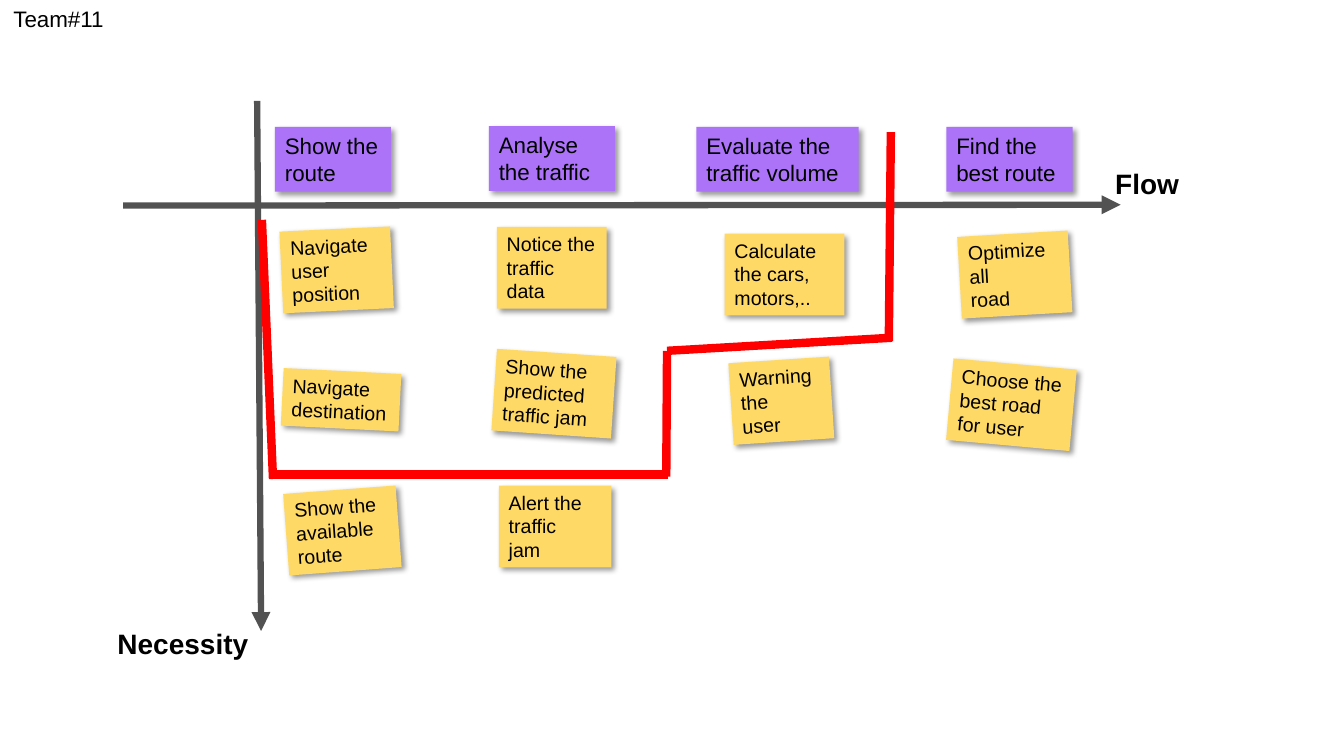
from dataclasses import dataclass

from lxml import etree
from pptx import Presentation
from pptx.dml.color import RGBColor
from pptx.enum.shapes import MSO_CONNECTOR, MSO_SHAPE
from pptx.enum.text import MSO_ANCHOR, MSO_AUTO_SIZE, PP_ALIGN
from pptx.oxml.ns import qn
from pptx.util import Cm, Pt

STRAIGHT = MSO_CONNECTOR.STRAIGHT
RECTANGLE = MSO_SHAPE.RECTANGLE
TOP = MSO_ANCHOR.TOP
FIT = MSO_AUTO_SIZE.SHAPE_TO_FIT_TEXT
LEFT, CENTER = PP_ALIGN.LEFT, PP_ALIGN.CENTER


@dataclass(frozen=True)
class Theme:
    font: str = "Arial"
    ink: str = "000000"
    axis: str = "525252"
    step: str = "AC73F9"
    story: str = "FFD966"
    release: str = "FF0000"
    step_size: int = 16
    story_size: int = 14
    axis_size: int = 20
    axis_width: float = 4.5
    release_width: float = 6


THEME = Theme()

LABELS = [
    ("Team#11", 0, 0, 2.95, 0.94, THEME.step_size, False),
    ("Flow", 27.79, 4.06, 2.24, 1.12, THEME.axis_size, True),
    ("Necessity", 2.64, 15.65, 3.94, 1.12, THEME.axis_size, True),
]
AXES = [
    (3.1, 5.18, 28.24, 5.16),
    (6.48, 2.54, 6.58, 15.9),
]
STEP_HEIGHT = 1.63
STEPS = [
    ("Show the route", 6.93, 3.2, 2.92),
    ("Analyse the traffic", 12.32, 3.18, 3.18),
    ("Evaluate the traffic volume", 17.55, 3.2, 4.09),
    ("Find the best route", 23.85, 3.2, 3.18),
]
TWO_LINES, THREE_LINES = 1.45, 2.06
STORIES = [
    ("Navigate user position", 7.09, 5.77, 2.79, THREE_LINES, -2.7),
    ("Navigate destination", 7.11, 9.35, 2.97, TWO_LINES, 2.9),
    ("Show the available route", 7.21, 12.34, 2.84, THREE_LINES, -4.3),
    ("Notice the traffic data", 12.52, 5.72, 2.77, THREE_LINES, 0),
    ("Show the predicted traffic jam", 12.45, 8.89, 3.02, THREE_LINES, 3.9),
    ("Alert the traffic\njam", 12.57, 12.24, 2.84, THREE_LINES, 0),
    ("Calculate the cars, motors,..", 18.26, 5.89, 3.02, THREE_LINES, 0),
    ("Warning the\nuser", 18.42, 9.07, 2.54, THREE_LINES, -3.8),
    ("Optimize all\nroad", 24.18, 5.89, 2.79, THREE_LINES, -3.3),
    ("Choose the best road for user", 23.93, 9.17, 3.12, THREE_LINES, 5.2),
]
RELEASE_BORDER = [
    (22.45, 3.33, 22.4, 8.59),
    (22.48, 8.51, 16.81, 8.84),
    (16.81, 8.84, 16.79, 12.01),
    (16.84, 11.96, 6.88, 11.96),
    (6.88, 12.07, 6.6, 5.54),
]


def write(frame, text, size, align, bold=False, wrap=True):
    frame.word_wrap = wrap
    frame.auto_size = FIT
    frame.vertical_anchor = TOP
    for index, line in enumerate(text.split("\n")):
        paragraph = frame.paragraphs[0] if index == 0 else frame.add_paragraph()
        paragraph.alignment = align
        run = paragraph.add_run()
        run.text = line
        run.font.name = THEME.font
        run.font.size = Pt(size)
        run.font.bold = bold
        run.font.color.rgb = RGBColor.from_string(THEME.ink)


def add_label(slide, text, left, top, width, height, size, bold):
    label = slide.shapes.add_textbox(Cm(left), Cm(top), Cm(width), Cm(height))
    write(label.text_frame, text, size, CENTER, bold, wrap=False)


def add_shadow(note):
    note.shadow.inherit = False
    effects = note.element.spPr.find(qn("a:effectLst"))
    shadow = etree.SubElement(
        effects, qn("a:outerShdw"), blurRad=str(Pt(4)), dist=str(Pt(3)),
        dir=str(45 * 60000), algn="tl", rotWithShape="0")
    color = etree.SubElement(shadow, qn("a:srgbClr"), val=THEME.ink)
    etree.SubElement(color, qn("a:alpha"), val="40000")


def add_note(slide, text, left, top, width, height, angle, color, size):
    note = slide.shapes.add_shape(RECTANGLE, Cm(left), Cm(top), Cm(width), Cm(height))
    note.rotation = angle
    note.fill.solid()
    note.fill.fore_color.rgb = RGBColor.from_string(color)
    note.line.fill.background()
    add_shadow(note)
    write(note.text_frame, text, size, LEFT)


def add_line(slide, ends, color, width, arrow=False):
    line = slide.shapes.add_connector(STRAIGHT, *map(Cm, ends))
    line.line.color.rgb = RGBColor.from_string(color)
    line.line.width = Pt(width)
    properties = line.element.spPr
    if arrow:
        etree.SubElement(properties.find(qn("a:ln")), qn("a:tailEnd"), type="triangle")
    etree.SubElement(properties, qn("a:effectLst"))


def main():
    deck = Presentation()
    deck.slide_width, deck.slide_height = Cm(33.87), Cm(19.05)
    slide = deck.slides.add_slide(deck.slide_layouts[6])
    for axis in AXES:
        add_line(slide, axis, THEME.axis, THEME.axis_width, arrow=True)
    for label in LABELS:
        add_label(slide, *label)
    for step in STEPS:
        add_note(slide, *step, STEP_HEIGHT, 0, THEME.step, THEME.step_size)
    for story in STORIES:
        add_note(slide, *story, THEME.story, THEME.story_size)
    for border in RELEASE_BORDER:
        add_line(slide, border, THEME.release, THEME.release_width)
    deck.save("out.pptx")


if __name__ == "__main__":
    main()
